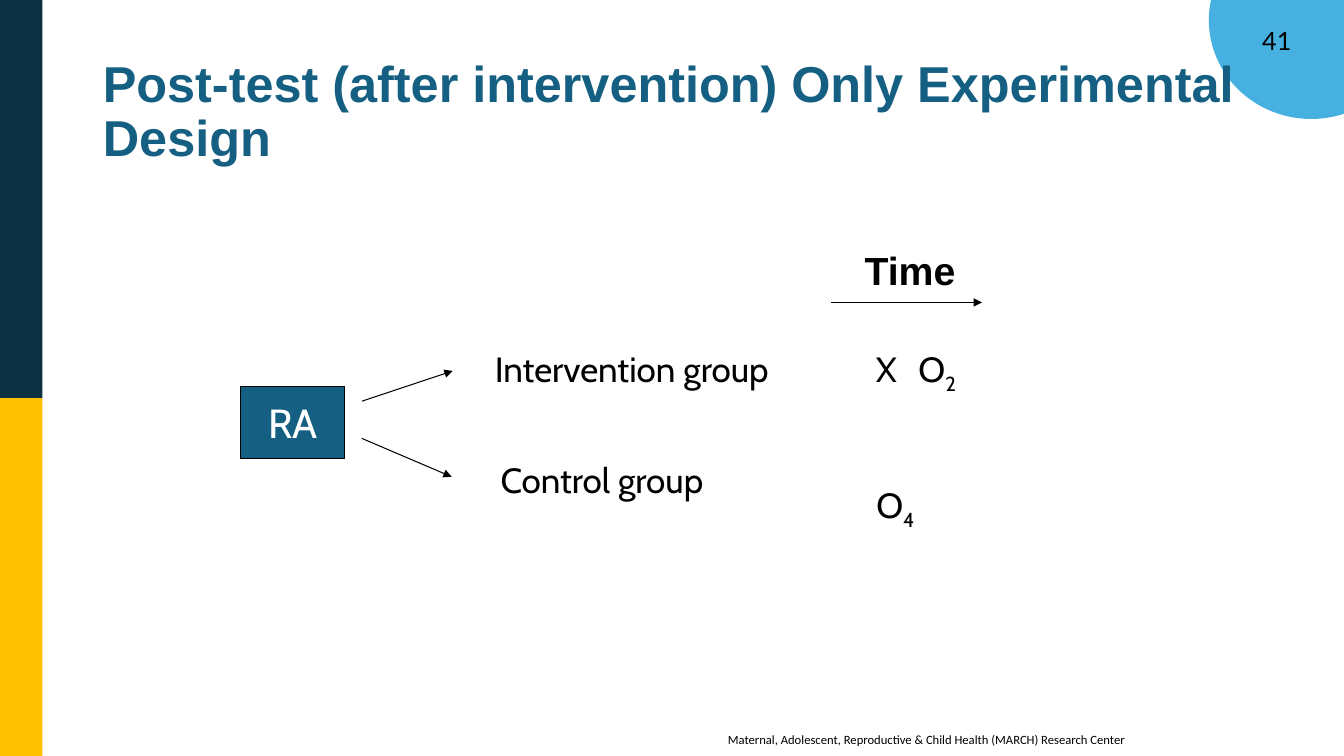
from lxml import etree
from pptx import Presentation
from pptx.dml.color import RGBColor
from pptx.enum.shapes import MSO_CONNECTOR, MSO_SHAPE
from pptx.enum.text import MSO_ANCHOR, MSO_AUTO_SIZE, PP_ALIGN
from pptx.oxml.ns import qn
from pptx.util import Inches, Pt

RECTANGLE = MSO_SHAPE.RECTANGLE
OVAL = MSO_SHAPE.OVAL
STRAIGHT = MSO_CONNECTOR.STRAIGHT
LEFT = PP_ALIGN.LEFT
CENTER = PP_ALIGN.CENTER
MIDDLE = MSO_ANCHOR.MIDDLE
NO_AUTOFIT = MSO_AUTO_SIZE.NONE

NAVY = "0B3041"
YELLOW = "FFC000"
SKY = "46B1E1"
TEAL = "156082"
BLACK = "000000"
WHITE = "FFFFFF"
TITLE_ONLY = 5


def color(hex_value):
    return RGBColor.from_string(hex_value)


def format_run(run, font_name, size, font_color, bold=False):
    run.font.name = font_name
    run.font.size = Pt(size)
    run.font.color.rgb = color(font_color)
    run.font.bold = bold


def write_text(shape, text, font_name, size, font_color, alignment=LEFT, bold=False):
    shape.text_frame.text = text
    paragraph = shape.text_frame.paragraphs[0]
    paragraph.alignment = alignment
    for run in paragraph.runs:
        format_run(run, font_name, size, font_color, bold)
    return paragraph


def place_title(slide, text):
    title = slide.shapes.title
    title.left, title.top = Inches(0.92), Inches(0.4)
    title.width, title.height = Inches(11.5), Inches(1.45)
    paragraph = write_text(title, text, "Arial", 36, TEAL, bold=True)
    paragraph.line_spacing = 0.9
    title.text_frame.auto_size = NO_AUTOFIT
    title.text_frame.word_wrap = True
    title.text_frame.vertical_anchor = MIDDLE
    title.element.getparent().append(title.element)


def add_block(slide, kind, left, top, width, height, fill, line=None, line_width=0.75):
    shape = slide.shapes.add_shape(
        kind, Inches(left), Inches(top), Inches(width), Inches(height))
    shape.shadow.inherit = False
    shape.fill.solid()
    shape.fill.fore_color.rgb = color(fill)
    if line:
        shape.line.color.rgb = color(line)
        shape.line.width = Pt(line_width)
    else:
        shape.line.fill.background()
    return shape


def add_label(slide, text, left, top, width, height, size, font_name="Cabin",
              alignment=CENTER, bold=False, wrap=True):
    box = slide.shapes.add_textbox(
        Inches(left), Inches(top), Inches(width), Inches(height))
    box.text_frame.word_wrap = wrap
    return write_text(box, text, font_name, size, BLACK, alignment, bold)


def add_subscript(paragraph, digit):
    run = paragraph.add_run()
    run.text = digit
    format_run(run, "Cabin", 25, BLACK)
    run.font._element.set("baseline", "-25000")


def add_arrow(slide, start_x, start_y, end_x, end_y):
    arrow = slide.shapes.add_connector(
        STRAIGHT, Inches(start_x), Inches(start_y), Inches(end_x), Inches(end_y))
    arrow.line.color.rgb = color(BLACK)
    arrow.line.width = Pt(0.75)
    properties = arrow.element.spPr
    etree.SubElement(properties.find(qn("a:ln")), qn("a:tailEnd"), type="triangle")
    etree.SubElement(properties, qn("a:effectLst"))


def add_frame(slide):
    add_block(slide, OVAL, 12, -0.77, 2.01, 1.94, SKY, SKY, 1.5)
    add_label(slide, "41", 12.42, 0.2, 0.5, 0.4, 18, "Lato", LEFT, wrap=False)
    add_block(slide, RECTANGLE, 0, 0, 0.42, 3.95, NAVY)
    add_block(slide, RECTANGLE, 0, 3.95, 0.42, 3.55, YELLOW)
    add_label(slide, "Maternal, Adolescent, Reproductive & Child Health (MARCH) Research Center",
              7.12, 7.21, 4.49, 0.25, 9, "Calibri", LEFT)


def add_design(slide):
    assignment = add_block(slide, RECTANGLE, 2.39, 3.83, 1.03, 0.72, TEAL, BLACK)
    write_text(assignment, "RA", "Cabin", 29, WHITE, CENTER)
    assignment.text_frame.word_wrap = False
    assignment.text_frame.vertical_anchor = MIDDLE

    add_arrow(slide, 3.59, 3.98, 4.49, 3.68)
    add_arrow(slide, 3.59, 4.35, 4.48, 4.73)
    add_label(slide, "Intervention group", 4.67, 3.4, 3.19, 0.52, 25, wrap=False)
    add_label(slide, "Control group", 4.75, 4.5, 2.44, 0.52, 25)

    add_label(slide, "Time", 8.33, 2.39, 1.39, 0.57, 28, "Arial", bold=True)
    add_arrow(slide, 8.24, 3, 9.74, 3)
    treated = add_label(slide, " X\tO", 8.09, 3.4, 1.91, 0.57, 25)
    add_subscript(treated, "2")
    untreated = add_label(slide, "O", 8.09, 4.75, 1.58, 0.52, 25, wrap=False)
    add_subscript(untreated, "4")


def main():
    presentation = Presentation()
    presentation.slide_width = Inches(13.33)
    presentation.slide_height = Inches(7.5)
    slide = presentation.slides.add_slide(presentation.slide_layouts[TITLE_ONLY])
    add_frame(slide)
    place_title(slide, "Post-test (after intervention) Only Experimental Design")
    add_design(slide)
    presentation.save("out.pptx")


if __name__ == "__main__":
    main()
